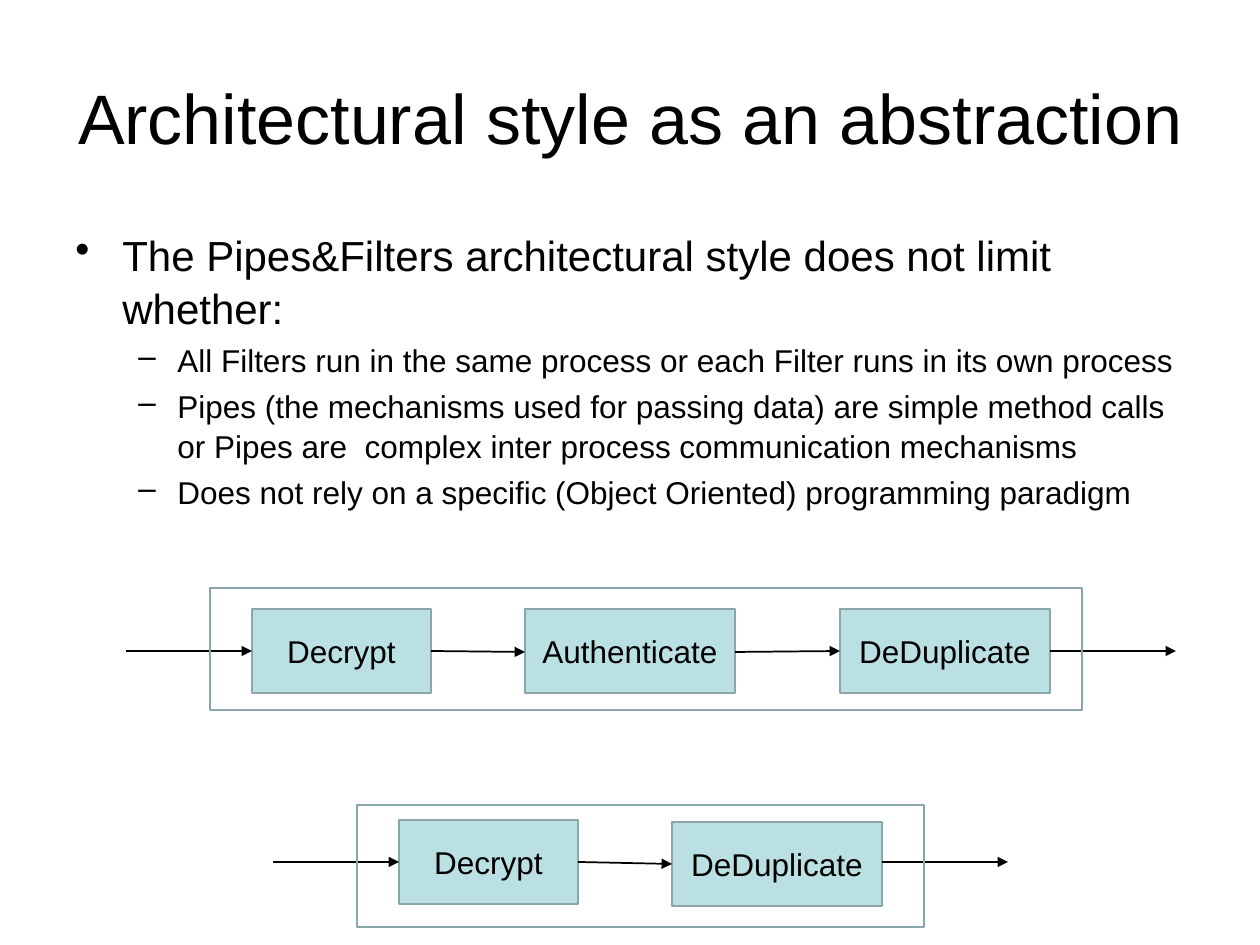
from lxml.etree import SubElement
from pptx import Presentation
from pptx.dml.color import RGBColor
from pptx.enum.shapes import MSO_CONNECTOR, MSO_SHAPE
from pptx.enum.text import MSO_ANCHOR, PP_ALIGN
from pptx.oxml.ns import qn
from pptx.util import Pt

PX = 914400 // 126  # EMU per px, at 126 px to the inch
COLORS = {"text": "000000", "filter": "BBE0E3", "outline": "8AA6A8"}
FONT = "Arial"

# Level, text
BULLETS = [
    (0, "The Pipes&Filters architectural style does not limit whether:"),
    (1, "All Filters run in the same process or each Filter runs in its own process"),
    (1, "Pipes (the mechanisms used for passing data) are simple method calls "
        "or Pipes are  complex inter process communication mechanisms"),
    (1, "Does not rely on a specific (Object Oriented) programming paradigm"),
]
# Per level: mark, text indent and hanging in px, font size, space before
LEVELS = [("•", 47, 47, 24, 0), ("–", 102, 39, 18, 3.6)]

# Filters: label, left, top, width; pipes: start and end height (all within the frame)
FULL_FILTERS = [("Decrypt", 42, 21, 179), ("Authenticate", 315, 21, 210),
                ("DeDuplicate", 630, 21, 210)]
FULL_PIPES = [(63, 63), (63, 64), (64, 63), (63, 63)]
SHORT_FILTERS = [("Decrypt", 42, 15, 179), ("DeDuplicate", 315, 17, 210)]
SHORT_PIPES = [(57, 57), (57, 59), (57, 57)]
FILTER_HEIGHT = 84
OUTER_PIPE = 126


def color(name):
    return RGBColor.from_string(COLORS[name])


def emu(*lengths):
    return [length * PX for length in lengths]


def style_font(paragraph, size):
    paragraph.font.name = FONT
    paragraph.font.size = Pt(size)
    paragraph.font.color.rgb = color("text")


def add_title(slide, box, text):
    frame = slide.shapes.add_textbox(*emu(*box)).text_frame
    frame.word_wrap = True
    frame.vertical_anchor = MSO_ANCHOR.MIDDLE
    paragraph = frame.paragraphs[0]
    paragraph.text = text
    paragraph.alignment = PP_ALIGN.CENTER
    style_font(paragraph, 40)


def add_bullets(slide, box, items):
    frame = slide.shapes.add_textbox(*emu(*box)).text_frame
    frame.word_wrap = True
    for index, (level, text) in enumerate(items):
        mark, indent, hanging, size, space = LEVELS[level]
        paragraph = frame.add_paragraph() if index else frame.paragraphs[0]
        paragraph.text = text
        paragraph.level = level
        paragraph.line_spacing = 1.05
        paragraph.space_before = Pt(space)
        style_font(paragraph, size)
        # Bullet mark and hanging indent
        properties = paragraph._p.get_or_add_pPr()
        properties.set("marL", str(indent * PX))
        properties.set("indent", str(-hanging * PX))
        bullet = properties.makeelement(qn("a:buChar"), {"char": mark})
        properties.insert_element_before(bullet, "a:tabLst", "a:defRPr", "a:extLst")


def add_rectangle(slide, box, fill=None):
    shape = slide.shapes.add_shape(MSO_SHAPE.RECTANGLE, *emu(*box))
    shape.shadow.inherit = False
    shape.line.color.rgb = color("outline")
    shape.line.width = Pt(1)
    if fill:
        shape.fill.solid()
        shape.fill.fore_color.rgb = color(fill)
    else:
        shape.fill.background()
    return shape


def add_filter(slide, box, label):
    frame = add_rectangle(slide, box, "filter").text_frame
    frame.vertical_anchor = MSO_ANCHOR.MIDDLE
    paragraph = frame.paragraphs[0]
    paragraph.text = label
    paragraph.alignment = PP_ALIGN.CENTER
    style_font(paragraph, 18)


def add_pipe(slide, *ends):
    pipe = slide.shapes.add_connector(MSO_CONNECTOR.STRAIGHT, *emu(*ends))
    pipe.line.color.rgb = color("text")
    pipe.line.width = Pt(1)
    SubElement(pipe.line._get_or_add_ln(), qn("a:tailEnd"),
               {"type": "triangle", "w": "med", "len": "med"})
    SubElement(pipe._element.spPr, qn("a:effectLst"))


def add_pipeline(slide, box, filters, pipes):
    left, top, width, height = box
    for label, x, y, filter_width in filters:
        add_filter(slide, (left + x, top + y, filter_width, FILTER_HEIGHT), label)

    # Each pipe runs from the right side of one filter to the left side of the next
    starts = [x + filter_width for _, x, _, filter_width in filters]
    ends = [x for _, x, _, _ in filters]
    starts.insert(0, ends[0] - OUTER_PIPE)
    ends.append(starts[-1] + OUTER_PIPE)
    for start, end, (start_y, end_y) in zip(starts, ends, pipes):
        add_pipe(slide, left + start, top + start_y, left + end, top + end_y)

    # Frame around the filters
    add_rectangle(slide, box)


def main():
    presentation = Presentation()
    presentation.slide_width, presentation.slide_height = emu(1260, 945)
    slide = presentation.slides.add_slide(presentation.slide_layouts[6])
    add_title(slide, (63, 38, 1134, 157), "Architectural style as an abstraction")
    add_bullets(slide, (63, 221, 1134, 377), BULLETS)
    add_pipeline(slide, (210, 588, 872, 122), FULL_FILTERS, FULL_PIPES)
    add_pipeline(slide, (357, 805, 567, 122), SHORT_FILTERS, SHORT_PIPES)
    presentation.save("out.pptx")


if __name__ == "__main__":
    main()
